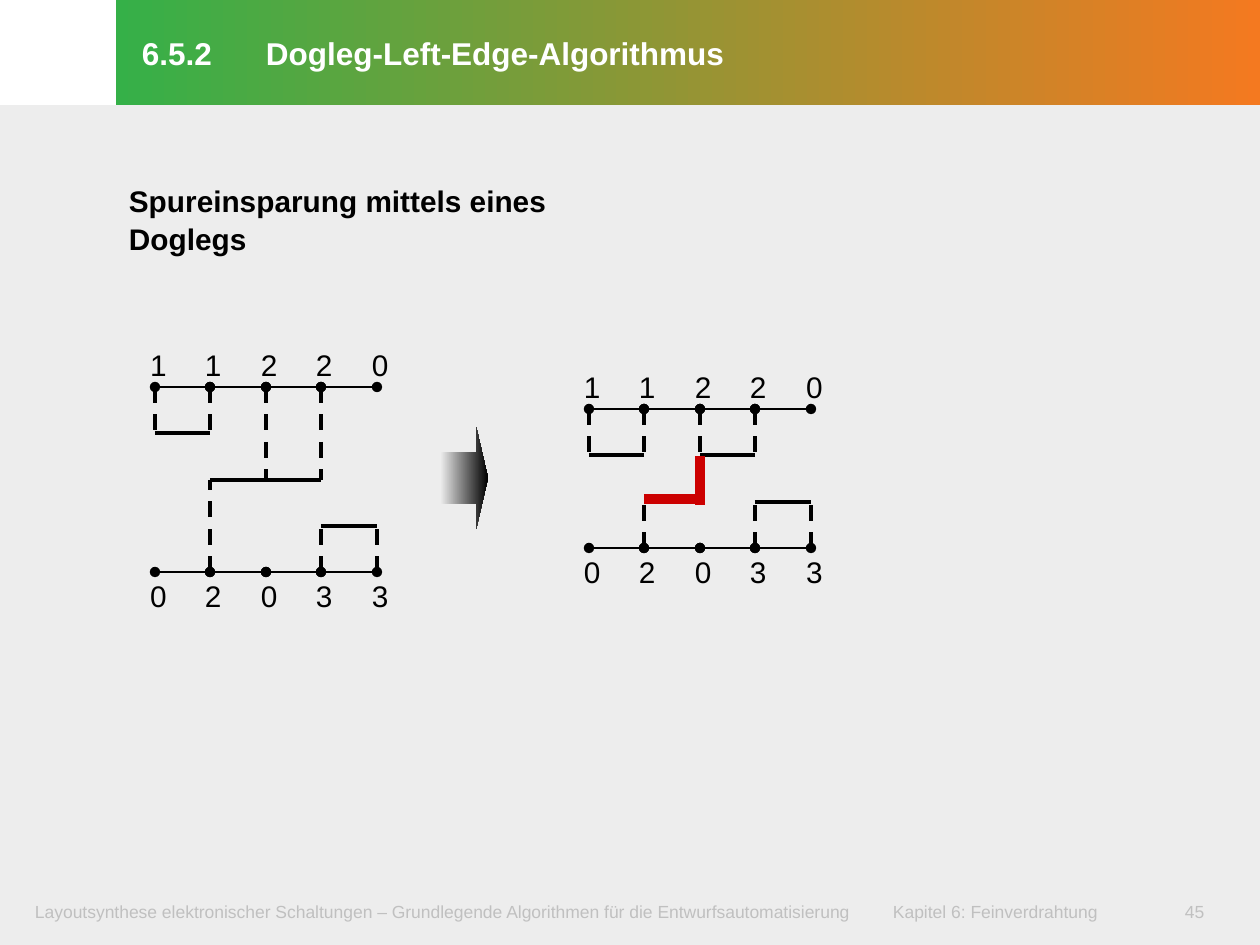
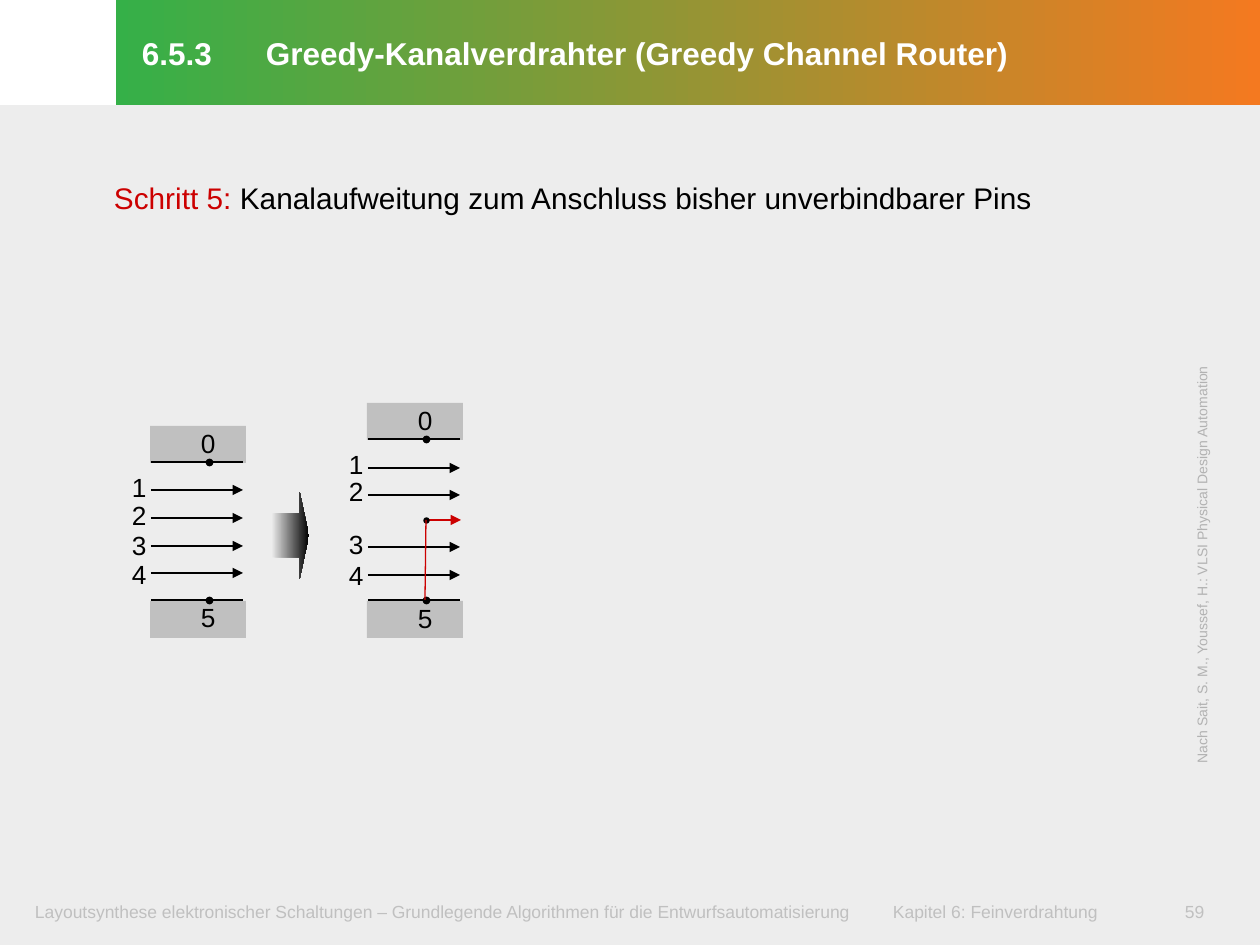
from pptx import Presentation
from pptx.dml.color import RGBColor
from pptx.enum.dml import MSO_LINE as Dash
from pptx.enum.shapes import MSO_CONNECTOR as Link, MSO_SHAPE as Form
from pptx.enum.text import MSO_ANCHOR as Anchor, MSO_AUTO_SIZE as Fit, PP_ALIGN as Align
from pptx.oxml.ns import qn
from pptx.util import Pt
from lxml.etree import SubElement

FONT = "Arial"
BLACK, RED, WHITE = "000000", "CC0000", "FFFFFF"
PAPER, PALE, SILVER, NOTE = "EDEDED", "C0C0C0", "C0C0C0", "B2B2B2"
BAND = ("35B048", "F47920")
SHADE = ("EAEAEA", BLACK)

BOOK = "Layoutsynthese elektronischer Schaltungen – Grundlegende Algorithmen für die Entwurfsautomatisierung"
CHAPTER = "Kapitel 6: Feinverdrahtung"
DOGLEG = dict(number="6.5.2", title="Dogleg-Left-Edge-Algorithmus", page="45")
GREEDY = dict(number="6.5.3", title="Greedy-Kanalverdrahter (Greedy Channel Router)", page="59")

HEADING = "Spureinsparung mittels eines Doglegs"
STEP = [("Schritt 5: ", RED), ("Kanalaufweitung zum Anschluss bisher unverbindbarer Pins", BLACK)]
CREDIT = "Nach Sait, S. M., Youssef, H.: VLSI Physical Design Automation"

COLS = (0, 55, 111, 166, 222)
ROWS = (0, 46, 93, 139, 185)
PINS = ("11220", "02033")
CHANNELS = [
    dict(x=155, y=387, depth=4,
         tracks=[(1, 0, 1), (2, 1, 3), (3, 3, 4)],
         drops=[(0, 0, 1), (1, 0, 1), (2, 0, 2), (3, 0, 2), (1, 4, 2), (3, 4, 3), (4, 4, 3)]),
    dict(x=589, y=409, depth=3,
         tracks=[(1, 0, 1), (1, 2, 3), (2, 1, 2), (2, 3, 4)],
         drops=[(0, 0, 1), (1, 0, 1), (2, 0, 2), (3, 0, 1), (1, 3, 2), (3, 3, 2), (4, 3, 2)]),
]
BENDS = [((644, 499), (702, 499)), ((700, 505), (700, 456))]

ROUTES = [
    dict(x=151, blocks=(426, 601), rails=(462, 600), pins=(421, 595),
         wires=(490, 518, 546, 573), tags=(465, 493, 523, 552)),
    dict(x=368, blocks=(403, 601), rails=(439, 600), pins=(398, 596),
         wires=(468, 495, 547, 575), tags=(442, 469, 522, 553)),
]


def px(n):
    return round(n * 914400 / 126)


def hue(code):
    return RGBColor.from_string(code)


def blend(shape, ends):
    shape.fill.gradient()
    shape.fill.gradient_angle = 0
    for stop, code in zip(shape.fill.gradient_stops, ends):
        stop.color.rgb = hue(code)


def form(slide, kind, box, fill, width=0):
    shape = slide.shapes.add_shape(kind, *map(px, box))
    shape.shadow.inherit = False
    if isinstance(fill, tuple):
        blend(shape, fill)
    else:
        shape.fill.solid()
        shape.fill.fore_color.rgb = hue(fill)
    if width:
        shape.line.color.rgb = hue(fill)
        shape.line.width = Pt(width)
    else:
        shape.line.fill.background()
    return shape


def line(slide, start, end, width, code=BLACK, dash=False, head=None, tail=None):
    link = slide.shapes.add_connector(Link.STRAIGHT, *map(px, (*start, *end)))
    link.line.color.rgb = hue(code)
    link.line.width = Pt(width)
    if dash:
        link.line.dash_style = Dash.DASH
    props = link.element.spPr
    ln = props.find(qn("a:ln"))
    for tag, tip in (("a:headEnd", head), ("a:tailEnd", tail)):
        if tip:
            SubElement(ln, qn(tag), type=tip)
    SubElement(props, qn("a:effectLst"))


def write(shape, runs, size, inset, bold=False, tab=None, space=None):
    frame = shape.text_frame
    frame.word_wrap = True
    frame.auto_size = Fit.NONE
    (frame.margin_left, frame.margin_top,
     frame.margin_right, frame.margin_bottom) = map(px, inset)
    para = frame.paragraphs[0]
    para.alignment = Align.LEFT
    if tab:
        stops = SubElement(para._p.get_or_add_pPr(), qn("a:tabLst"))
        SubElement(stops, qn("a:tab"), pos=str(px(tab)), algn="l")
    if space:
        para.line_spacing = space
    for words, code in runs:
        run = para.add_run()
        run.text = words
        run.font.name = FONT
        run.font.size = Pt(size)
        run.font.bold = bold
        run.font.color.rgb = hue(code)


def text(slide, box, runs, size, inset=(14, 6, 14, 6), **style):
    shape = slide.shapes.add_textbox(*map(px, box))
    write(shape, runs, size, inset, **style)
    return shape


def base(deck, number, title, page):
    slide = deck.slides.add_slide(deck.slide_layouts[5])
    bar = slide.shapes.title
    bar.left, bar.top, bar.width, bar.height = map(px, (116, 0, 1144, 105))
    blend(bar, BAND)
    write(bar, [(f"{number}\t{title}", WHITE)], 18, (26, 6, 13, 9),
          bold=True, tab=124, space=Pt(23.5))
    bar.text_frame.vertical_anchor = Anchor.MIDDLE
    form(slide, Form.RECTANGLE, (0, 105, 1260, 840), PAPER)
    foot = (15, 8, 15, 8)
    text(slide, (20, 893, 1155, 40), [(f"{BOOK}\t{CHAPTER}", PALE)], 10, foot, tab=858)
    text(slide, (1170, 893, 75, 40), [(page, PALE)], 10, foot)
    return slide


def arrow(slide, box):
    shape = form(slide, Form.RIGHT_ARROW, box, SHADE)
    shape.adjustments[0], shape.adjustments[1] = 0.5, 0.25


def channel(slide, x, y, depth, tracks, drops):
    def at(col, row):
        return x + COLS[col], y + ROWS[row]

    for row, lift, pins in zip((0, depth), (46, 0), PINS):
        for col, pin in enumerate(pins):
            left, top = at(col, row)
            text(slide, (left - 19, top - lift, 46, 49), [(pin, BLACK)], 17)
            if col:
                line(slide, at(col - 1, row), (left, top), 0.75, head="oval", tail="oval")
    for col, start, end in drops:
        line(slide, at(col, start), at(col, end), 2.25, dash=True)
    for row, start, end in tracks:
        line(slide, at(start, row), at(end, row), 2.25)


def dot(slide, x, y, width):
    form(slide, Form.OVAL, (x - 2, y - 2, 5, 5), BLACK, width)


def route(slide, x, blocks, rails, pins, wires, tags):
    for block, rail, top, pin in zip(blocks, rails, pins, "05"):
        form(slide, Form.RECTANGLE, (x - 1, block, 96, 37), SILVER)
        line(slide, (x, rail), (x + 92, rail), 1.5)
        dot(slide, x + 58, rail, 1.5)
        text(slide, (x + 36, top, 37, 44), [(pin, BLACK)], 15)
    for wire, top, tag in zip(wires, tags, "1234"):
        line(slide, (x, wire), (x + 92, wire), 0.75, tail="triangle")
        text(slide, (x - 33, top, 37, 44), [(tag, BLACK)], 15)


def main():
    deck = Presentation()
    deck.slide_width, deck.slide_height = px(1260), px(945)

    slide = base(deck, **DOGLEG)
    text(slide, (116, 175, 530, 85), [(HEADING, BLACK)], 17, (13, 6, 13, 6),
         bold=True, space=1.05)
    for item in CHANNELS:
        channel(slide, **item)
    arrow(slide, (441, 427, 47, 102))
    for start, end in BENDS:
        line(slide, start, end, 6, RED)

    slide = base(deck, **GREEDY)
    text(slide, (88, 168, 959, 57), STEP, 17, (26, 6, 13, 9), space=Pt(23.5))
    for item in ROUTES:
        route(slide, **item)
    arrow(slide, (272, 492, 37, 87))
    line(slide, (427, 520), (461, 520), 0.75, RED, tail="triangle")
    dot(slide, 426, 520, 0.75)
    line(slide, (425, 600), (426, 520), 0.75, RED)
    side = text(slide, (979, 538, 447, 30), [(CREDIT, NOTE)], 8, (13, 6, 13, 6))
    side.rotation = 270

    deck.save("out.pptx")


if __name__ == "__main__":
    main()
